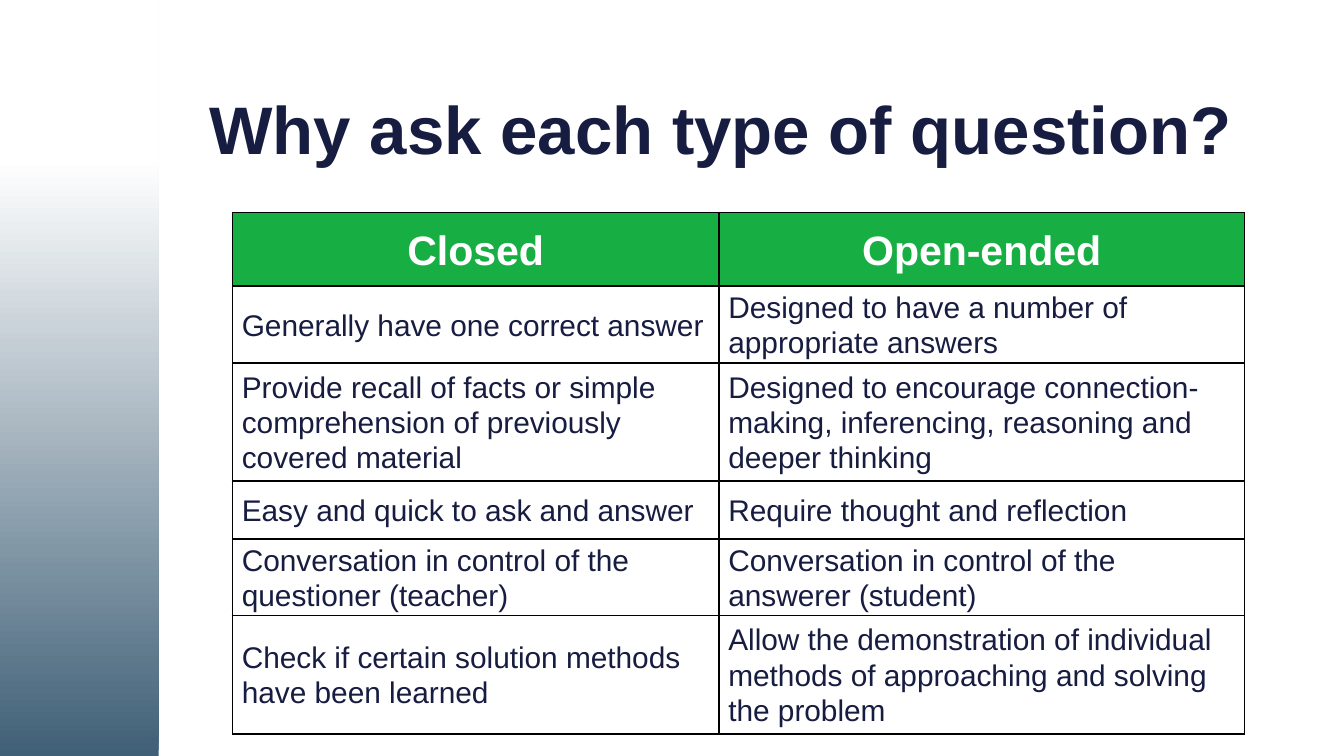
from dataclasses import dataclass

from lxml import etree
from pptx import Presentation
from pptx.dml.color import RGBColor
from pptx.enum import shapes, text
from pptx.oxml import ns
from pptx.util import Inches, Pt


@dataclass(frozen=True)
class Theme:
    font: str = "Arial"
    navy: str = "171C41"
    green: str = "17AF44"
    white: str = "FFFFFF"
    steel: str = "406077"
    border: str = "000000"
    title_size: int = 36
    header_size: int = 22
    body_size: int = 16


@dataclass(frozen=True)
class Row:
    closed: str
    open_ended: str
    height: float
    is_header: bool = False


THEME = Theme()
SLIDE_WIDTH = Inches(10)
SLIDE_HEIGHT = SLIDE_WIDTH * 9 // 16
COLUMN_WIDTHS = (3.62, 3.91)
ROWS = (
    Row("Closed", "Open-ended", 0.55, is_header=True),
    Row("Generally have one correct answer",
        "Designed to have a number of appropriate answers", 0.43),
    Row("Provide recall of facts or simple comprehension of previously covered material",
        "Designed to encourage connection-making, inferencing, reasoning and deeper thinking",
        0.88),
    Row("Easy and quick to ask and answer", "Require thought and reflection", 0.43),
    Row("Conversation in control of the questioner (teacher)",
        "Conversation in control of the answerer (student)", 0.43),
    Row("Check if certain solution methods have been learned",
        "Allow the demonstration of individual methods of approaching and solving the problem",
        0.88),
)


def style_paragraph(paragraph, size: int, color: str, bold: bool, spacing: float) -> None:
    paragraph.line_spacing = spacing
    paragraph.font.name = THEME.font
    paragraph.font.size = Pt(size)
    paragraph.font.bold = bold
    paragraph.font.color.rgb = RGBColor.from_string(color)
    # The paragraph mark also counts towards the row height
    etree.SubElement(paragraph._p, ns.qn("a:endParaRPr"), sz=str(size * 100))


def add_side_band(slide) -> None:
    band = slide.shapes.add_shape(
        shapes.MSO_SHAPE.RECTANGLE, 0, 0, Inches(1.18), SLIDE_HEIGHT)
    band.shadow.inherit = False
    band.line.fill.background()
    band.fill.gradient()
    band.fill.gradient_angle = 90
    stops = ((0, THEME.steel), (0.79, THEME.white))
    for stop, (position, color) in zip(band.fill.gradient_stops, stops):
        stop.position = position
        stop.color.rgb = RGBColor.from_string(color)


def add_title(slide, title: str) -> None:
    box = slide.shapes.add_textbox(Inches(1.46), Inches(0.3), Inches(7.94), Inches(1.38))
    frame = box.text_frame
    frame.word_wrap = True
    frame.vertical_anchor = text.MSO_ANCHOR.MIDDLE
    frame.text = title
    style_paragraph(frame.paragraphs[0], THEME.title_size, THEME.navy, True, 0.9)


def add_borders(cell) -> None:
    properties = cell._tc.get_or_add_tcPr()
    for index, side in enumerate(("lnL", "lnR", "lnT", "lnB")):
        line = etree.Element(ns.qn(f"a:{side}"), w=str(Pt(1)))
        fill = etree.SubElement(line, ns.qn("a:solidFill"))
        etree.SubElement(fill, ns.qn("a:srgbClr"), val=THEME.border)
        properties.insert(index, line)


def fill_cell(cell, content: str, is_header: bool) -> None:
    cell.text = content
    cell.vertical_anchor = text.MSO_ANCHOR.MIDDLE
    cell.margin_left = cell.margin_right = Inches(0.07)
    cell.margin_top = cell.margin_bottom = 0
    paragraph = cell.text_frame.paragraphs[0]
    if is_header:
        cell.fill.solid()
        cell.fill.fore_color.rgb = RGBColor.from_string(THEME.green)
        paragraph.alignment = text.PP_ALIGN.CENTER
        style_paragraph(paragraph, THEME.header_size, THEME.white, True, 1.07)
    else:
        cell.fill.background()
        style_paragraph(paragraph, THEME.body_size, THEME.navy, False, 1.07)
    add_borders(cell)


def add_comparison_table(slide, rows: tuple[Row, ...]) -> None:
    table = slide.shapes.add_table(
        len(rows), len(COLUMN_WIDTHS), Inches(1.73), Inches(1.58),
        Inches(sum(COLUMN_WIDTHS)), Inches(sum(row.height for row in rows))).table
    table.horz_banding = False
    for column, width in zip(table.columns, COLUMN_WIDTHS):
        column.width = Inches(width)
    for table_row, row in zip(table.rows, rows):
        table_row.height = Inches(row.height)
        for cell, content in zip(table_row.cells, (row.closed, row.open_ended)):
            fill_cell(cell, content, row.is_header)


def main() -> None:
    presentation = Presentation()
    presentation.slide_width = SLIDE_WIDTH
    presentation.slide_height = SLIDE_HEIGHT
    slide = presentation.slides.add_slide(presentation.slide_layouts[6])

    # Background band, heading and comparison
    add_side_band(slide)
    add_title(slide, "Why ask each type of question?")
    add_comparison_table(slide, ROWS)

    presentation.save("out.pptx")


if __name__ == "__main__":
    main()
